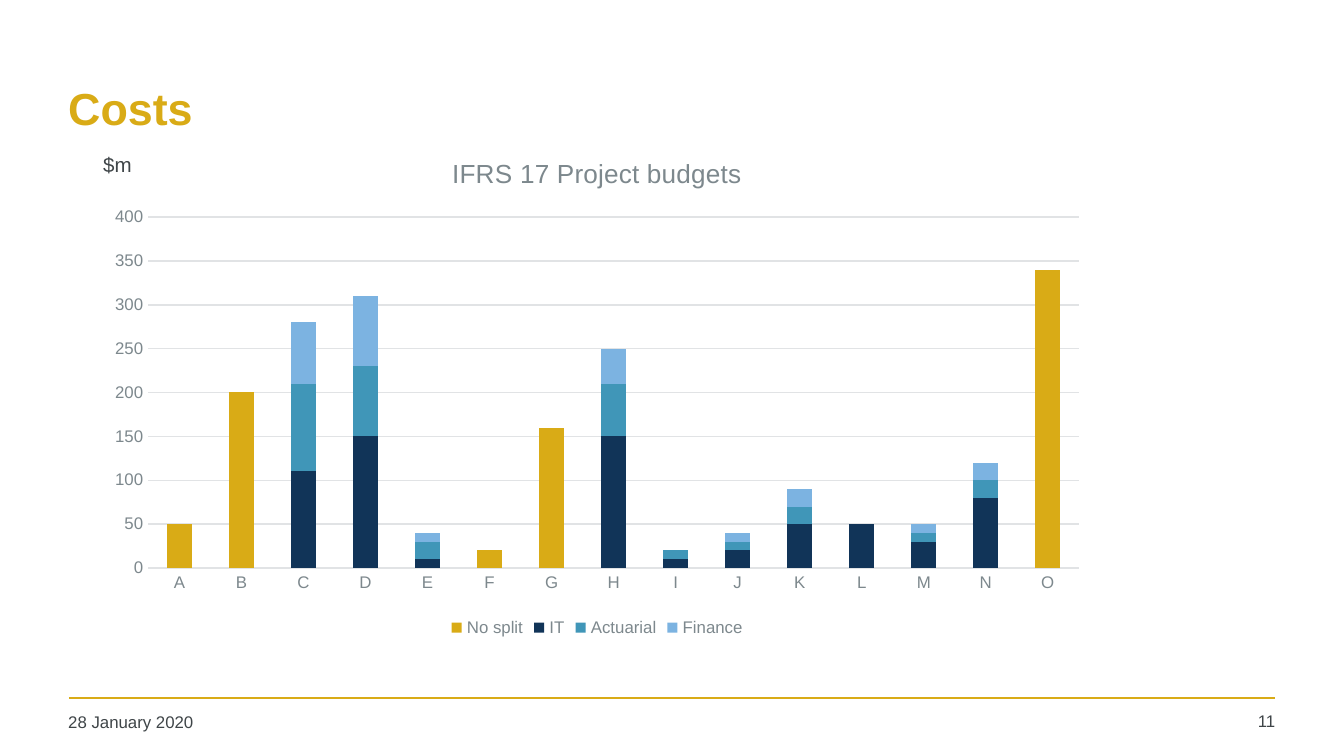
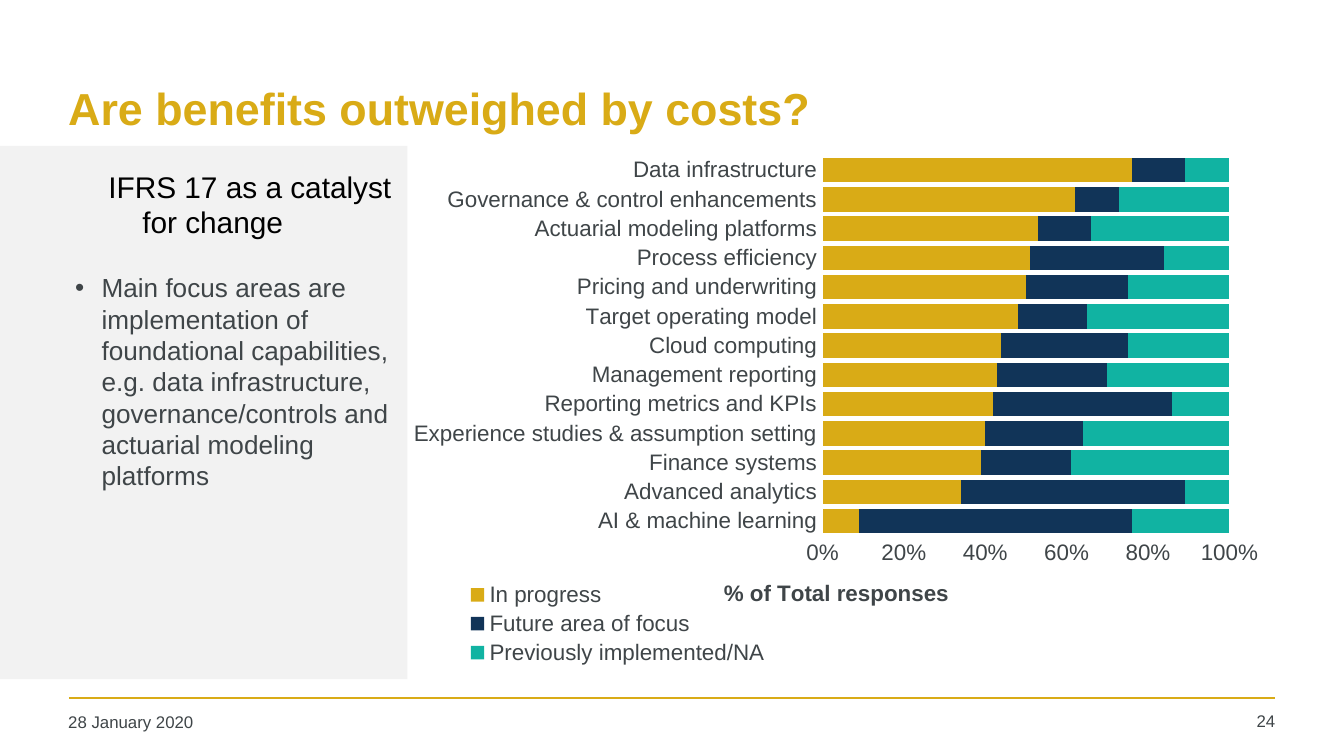
from lxml import etree
from pptx import Presentation
from pptx.chart.data import CategoryChartData
from pptx.dml.color import RGBColor
from pptx.enum.chart import XL_CHART_TYPE as ChartType
from pptx.enum.chart import XL_LEGEND_POSITION as LegendPosition
from pptx.enum.chart import XL_TICK_MARK as TickMark
from pptx.enum.shapes import MSO_CONNECTOR as Connector
from pptx.enum.shapes import MSO_SHAPE as Shape
from pptx.enum.text import MSO_ANCHOR as Anchor
from pptx.enum.text import PP_ALIGN as Align
from pptx.oxml.ns import qn
from pptx.util import Cm, Pt

FONT = "Arial"
DATE = "28 January 2020"
COLORS = {
    "gold": "D9AB16", "navy": "113458", "blue": "4096B8", "sky": "7CB3E1",
    "teal": "11B3A2", "text": "3F4548", "muted": "7D888D", "grid": "E1E3E5",
    "panel": "F2F2F2", "black": "000000",
}
BUDGET_PROJECTS = list("ABCDEFGHIJKLMNO")
BUDGETS = [
    ("No split", "gold", {"A": 50, "B": 200, "F": 20, "G": 160, "O": 340}),
    ("IT", "navy", {"C": 110, "D": 150, "E": 10, "H": 150, "I": 10, "J": 20,
                    "K": 50, "L": 50, "M": 30, "N": 80}),
    ("Actuarial", "blue", {"C": 100, "D": 80, "E": 20, "H": 60, "I": 10,
                           "J": 10, "K": 20, "L": 0, "M": 10, "N": 20}),
    ("Finance", "sky", {"C": 70, "D": 80, "E": 10, "H": 40, "I": 0, "J": 10,
                        "K": 20, "L": 0, "M": 10, "N": 20}),
]
FOCUS_AREAS = [
    "AI & machine learning", "Advanced analytics", "Finance systems",
    "Experience studies & assumption setting", "Reporting metrics and KPIs",
    "Management reporting", "Cloud computing", "Target operating model",
    "Pricing and underwriting", "Process efficiency",
    "Actuarial modeling platforms", "Governance & control enhancements",
    "Data infrastructure",
]
RESPONSES = [
    ("In progress", "gold", [9, 34, 39, 40, 42, 43, 44, 48, 50, 51, 53, 62, 76]),
    ("Future area of focus", "navy",
     [67, 55, 22, 24, 44, 27, 31, 17, 25, 33, 13, 11, 13]),
    ("Previously implemented/NA", "teal",
     [24, 11, 39, 36, 14, 30, 25, 35, 25, 16, 34, 27, 11]),
]


def color(name):
    """Return a palette colour."""
    return RGBColor.from_string(COLORS[name])


def cm_box(box):
    """Convert left, top, width and height from centimetres."""
    return [Cm(length) for length in box]


def style_font(font, size, tint, bold=False):
    """Set typeface, size, colour and weight."""
    font.name = FONT
    font.size = Pt(size)
    font.bold = bold
    font.color.rgb = color(tint)


def add_text(slide, box, text, size, tint="text", bold=False, align=Align.LEFT,
             anchor=Anchor.TOP, insets=(0.2, 0.1), wrap=True):
    """Add a text box with one paragraph and return its frame."""
    frame = slide.shapes.add_textbox(*cm_box(box)).text_frame
    frame.word_wrap = wrap
    frame.vertical_anchor = anchor
    frame.margin_left = frame.margin_right = Cm(insets[0])
    frame.margin_top = frame.margin_bottom = Cm(insets[1])
    paragraph = frame.paragraphs[0]
    paragraph.text = text
    paragraph.alignment = align
    style_font(paragraph.font, size, tint, bold)
    return frame


def indent(paragraph, left, first):
    """Set the left margin and first-line indent in centimetres."""
    properties = paragraph._p.get_or_add_pPr()
    properties.set("marL", str(Cm(left)))
    properties.set("indent", str(Cm(first)))
    return properties


def add_bullet(frame, text, size, space_before):
    """Append a bulleted paragraph."""
    paragraph = frame.add_paragraph()
    paragraph.text = text
    paragraph.space_before = Pt(space_before)
    properties = indent(paragraph, 0.5, -0.5)
    etree.SubElement(properties, qn("a:buFont")).set("typeface", FONT)
    etree.SubElement(properties, qn("a:buChar")).set("char", "•")
    style_font(paragraph.font, size, "text")


def add_slide(deck, title, number):
    """Add a slide with title, footer rule, date and page number."""
    slide = deck.slides.add_slide(deck.slide_layouts[6])
    rule = slide.shapes.add_connector(
        Connector.STRAIGHT, Cm(1.3), Cm(13.19), Cm(24.1), Cm(13.19))
    rule.line.color.rgb = color("gold")
    rule.line.width = Pt(1)
    etree.SubElement(rule._element.spPr, qn("a:effectLst"))
    add_text(slide, (1.09, 0.84, 23.04, 2.39), title, 24, "gold", True,
             anchor=Anchor.MIDDLE)
    add_text(slide, (1.09, 13.36, 5.59, 0.69), DATE, 9)
    add_text(slide, (22.5, 13.34, 1.8, 0.71), str(number), 9, align=Align.RIGHT)
    return slide


def place(part, index, inner=False, **percents):
    """Fix a chart part at percentages of the chart area."""
    layout = part.find(qn("c:layout"))
    if layout is None:
        layout = etree.Element(qn("c:layout"))
        part.insert(index, layout)
    for child in list(layout):
        layout.remove(child)
    manual = etree.SubElement(layout, qn("c:manualLayout"))
    settings = [("xMode", "edge"), ("yMode", "edge")]
    settings += [(tag, percent / 100) for tag, percent in percents.items()]
    if inner:
        settings.insert(0, ("layoutTarget", "inner"))
    for tag, value in settings:
        etree.SubElement(manual, qn(f"c:{tag}")).set("val", str(value))


def style_axis(axis, size, tint, line=None):
    """Style the labels and line of an axis and hide its ticks."""
    style_font(axis.tick_labels.font, size, tint)
    axis.major_tick_mark = axis.minor_tick_mark = TickMark.NONE
    axis.has_major_gridlines = False
    if line:
        axis.format.line.color.rgb = color(line)
        axis.format.line.width = Pt(0.75)
    else:
        axis.format.line.fill.background()


def write_title(title, text, size, tint, bold=False):
    """Write a chart or axis title."""
    paragraph = title.text_frame.paragraphs[0]
    paragraph.text = text
    style_font(paragraph.font, size, tint, bold)


def add_stacked_chart(slide, kind, box, categories, series, gap, size, tint,
                      top, step, plot_area, axis_line=None):
    """Add a stacked bar chart with a legend below."""
    data = CategoryChartData()
    data.categories = categories
    for name, _, values in series:
        data.add_series(name, values)
    chart = slide.shapes.add_chart(kind, *cm_box(box), data).chart
    style_font(chart.font, size, tint)
    chart.has_title = False
    chart.has_legend = True
    chart.legend.position = LegendPosition.BOTTOM
    chart.legend.include_in_layout = False
    style_font(chart.legend.font, size, tint)
    plot = chart.plots[0]
    plot.gap_width = gap
    plot.overlap = 100
    plot.vary_by_categories = False
    for bars, (_, tone, _) in zip(plot.series, series):
        bars.format.fill.solid()
        bars.format.fill.fore_color.rgb = color(tone)
        bars.invert_if_negative = False
    style_axis(chart.category_axis, size, tint, axis_line)
    scale = chart.value_axis
    style_axis(scale, size, tint)
    scale.minimum_scale, scale.maximum_scale, scale.major_unit = 0, top, step
    place(chart._chartSpace.xpath(".//c:plotArea")[0], 0, True, **plot_area)
    return chart


def add_costs(deck):
    """Build the project budget slide."""
    slide = add_slide(deck, "Costs", 11)
    budgets = [(name, tone, [values.get(project) for project in BUDGET_PROJECTS])
               for name, tone, values in BUDGETS]
    chart = add_stacked_chart(
        slide, ChartType.COLUMN_STACKED, (1.8, 2.55, 18.97, 9.6),
        BUDGET_PROJECTS, budgets, 150, 9, "muted", 400, 50,
        {"x": 5.3, "y": 16.2, "w": 92.7, "h": 69.1}, "grid")
    chart.has_title = True
    write_title(chart.chart_title, "IFRS 17 Project budgets", 14, "muted")
    chart.value_axis.has_major_gridlines = True
    gridline = chart.value_axis.major_gridlines.format.line
    gridline.color.rgb = color("grid")
    gridline.width = Pt(0.75)
    add_text(slide, (1.7, 2.74, 1.09, 1.5), "$m", 11, insets=(0.25, 0.13),
             wrap=False)


def add_benefits(deck):
    """Build the benefits slide."""
    slide = add_slide(deck, "Are benefits outweighed by costs?", 24)
    chart = add_stacked_chart(
        slide, ChartType.BAR_STACKED_100, (7.49, 2.74, 16.61, 10.08),
        FOCUS_AREAS, RESPONSES, 20, 12, "text", 1, 0.2,
        {"x": 48.5, "y": 2, "w": 46.3, "h": 71.3})
    scale = chart.value_axis
    scale.tick_labels.number_format = "0%"
    scale.tick_labels.number_format_is_linked = False
    write_title(scale.axis_title, "% of Total responses", 12, "text", True)
    place(scale.axis_title._element, 1, x=36.8, y=80.7)
    place(chart.legend._element, 1, x=7.7, y=81.2, w=35, h=17.2)

    panel = slide.shapes.add_shape(Shape.RECTANGLE,
                                   *cm_box((0, 2.76, 7.7, 10.08)))
    panel.shadow.inherit = False
    panel.fill.solid()
    panel.fill.fore_color.rgb = color("panel")
    panel.line.fill.background()

    message = add_text(slide, (1.22, 3, 6.53, 9.93),
                       "IFRS 17 as a catalyst for change", 16, "black",
                       insets=(0.2, 0.18))
    indent(message.paragraphs[0], 1.27, -0.64)
    add_bullet(message, "Main focus areas are implementation of foundational "
               "capabilities, e.g. data infrastructure, governance/controls "
               "and actuarial modeling platforms", 14, 17)


def main():
    """Build and save the deck."""
    deck = Presentation()
    deck.slide_width, deck.slide_height = Cm(25.4), Cm(14.29)
    add_costs(deck)
    add_benefits(deck)
    deck.save("out.pptx")


if __name__ == "__main__":
    main()
